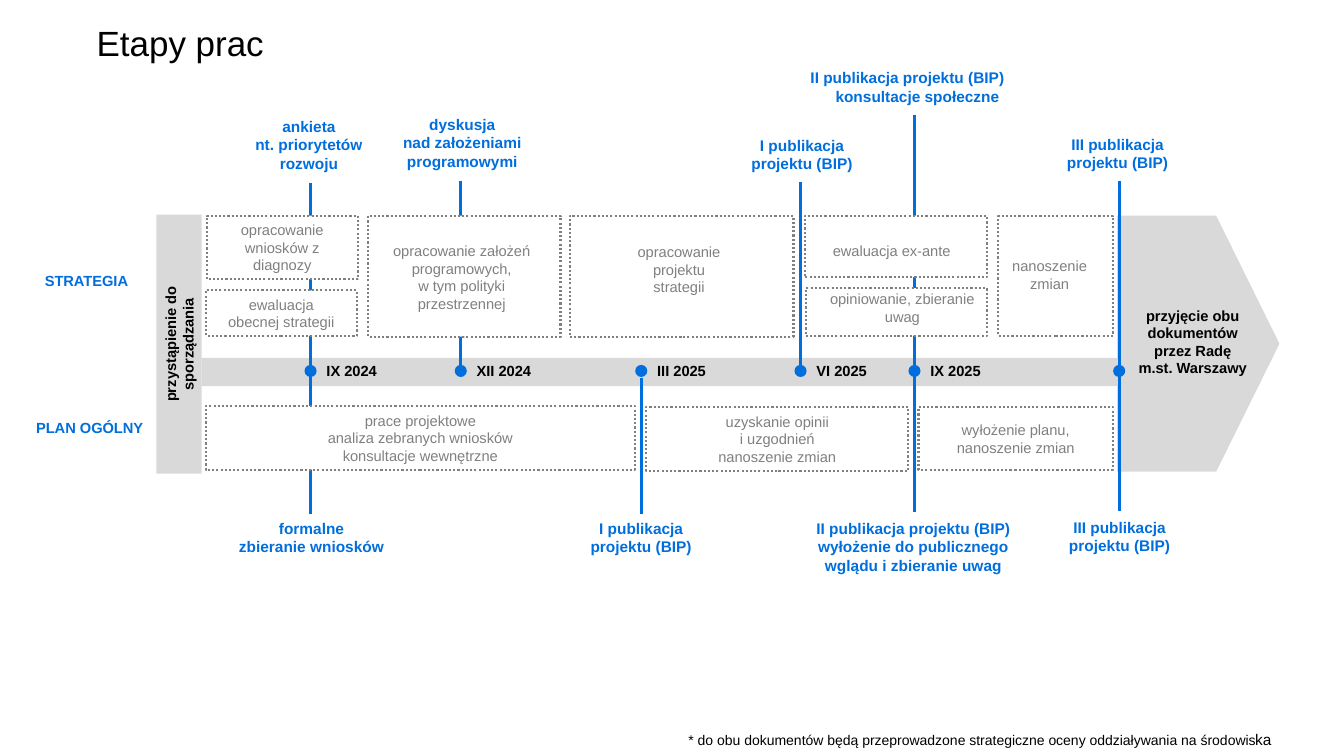
"""Build the "Etapy prac" slide: a timeline of two planning documents."""
from lxml.etree import SubElement
from pptx import Presentation
from pptx.dml.color import RGBColor
from pptx.enum.dml import MSO_LINE_DASH_STYLE as Dash
from pptx.enum.shapes import MSO_CONNECTOR as Connector, MSO_SHAPE as Shape
from pptx.enum.text import MSO_ANCHOR as Anchor, PP_ALIGN as Align
from pptx.oxml.ns import qn
from pptx.util import Pt

PX = 9144
FONT = "Arial"
BLUE = RGBColor(0x00, 0x6E, 0xDC)
GREY = RGBColor(0x80, 0x80, 0x80)
PALE = RGBColor(0xD9, 0xD9, 0xD9)
BLACK = RGBColor(0, 0, 0)
WHITE = RGBColor(255, 255, 255)

TITLE = "Etapy prac"
START = "przystąpienie do\nsporządzania"
FINISH = "przyjęcie obu\vdokumentów\vprzez Radę\vm.st. Warszawy"
FOOTNOTE = "* do obu dokumentów będą przeprowadzone strategiczne oceny oddziaływania na środowis"
FOOTNOTE_END = "ka"

TRACKS = [((7, 265, 130, 28), "STRATEGIA"), ((8, 411, 144, 28), "PLAN OGÓLNY")]

# fields: x, line top, line bottom, date
MILESTONES = [
    (308, 182, 510, "IX 2024"),
    (457, 180, 365, "XII 2024"),
    (636, 375, 510, "III 2025"),
    (794, 181, 369, "VI 2025"),
    (907, 114, 508, "IX 2025"),
    (1110, 180, 507, ""),
]

STAGES = [
    ((205, 214, 150, 63), "opracowanie\vwniosków z\vdiagnozy"),
    ((204, 288, 150, 45), "ewaluacja\nobecnej strategii"),
    ((365, 214, 191, 120), ""),
    ((565, 214, 222, 120), ""),
    ((798, 214, 181, 61), ""),
    ((799, 286, 180, 47), ""),
    ((990, 214, 114, 119), ""),
    ((204, 403, 426, 63),
     "prace projektowe\vanaliza zebranych wniosków\nkonsultacje wewnętrzne"),
    ((641, 404, 260, 63), "uzyskanie opinii\vi uzgodnień\vnanoszenie zmian"),
    ((911, 404, 193, 62), "wyłożenie planu,\nnanoszenie zmian"),
]

STAGE_LABELS = [
    ((371, 235, 174, 81),
     "opracowanie założeń\nprogramowych,\vw tym polityki\nprzestrzennej"),
    ((565, 236, 217, 74), "opracowanie\nprojektu\nstrategii"),
    ((816, 235, 137, 28), "ewaluacja ex-ante"),
    ((811, 283, 168, 46), "opiniowanie, zbieranie\vuwag"),
    ((990, 250, 102, 54), "nanoszenie\nzmian"),
]

CONSULTATION = ((794, 63, 232, 47), "II publikacja projektu (BIP)\nkonsultacje społeczne")
EVENTS = [
    ((198, 111, 217, 66), "ankieta\nnt. priorytetów\nrozwoju"),
    ((344, 109, 229, 66), "dyskusja\nnad założeniami\vprogramowymi"),
    ((726, 130, 139, 47), "I publikacja\nprojektu (BIP)"),
    ((1041, 129, 135, 47), "III publikacja\nprojektu (BIP)"),
    ((208, 510, 202, 47), "formalne\nzbieranie wniosków"),
    ((568, 510, 136, 47), "I publikacja\nprojektu (BIP)"),
    ((769, 510, 274, 66),
     "II publikacja projektu (BIP)\vwyłożenie do publicznego\vwglądu i zbieranie uwag"),
    ((1043, 509, 135, 47), "III publikacja\nprojektu (BIP)"),
]

AXIS_Y, DOT, DATE_GAP = 368, 12, 6


def scaled(box):
    return [value * PX for value in box]


def write(frame, text, size, color, bold=False, align=Align.CENTER, anchor=Anchor.TOP,
          spacing=None):
    frame.word_wrap = True
    frame.vertical_anchor = anchor
    frame.text = text
    for paragraph in frame.paragraphs:
        paragraph.alignment = align
        paragraph.line_spacing = spacing
        font = paragraph.font
        font.name, font.size, font.bold = FONT, Pt(size), bold
        font.color.rgb = color


def add_label(slide, box, text, size, color, **style):
    frame = slide.shapes.add_textbox(*scaled(box)).text_frame
    write(frame, text, size, color, **style)
    return frame


def add_block(slide, kind, box, fill):
    shape = slide.shapes.add_shape(kind, *scaled(box))
    shape.shadow.inherit = False
    shape.fill.solid()
    shape.fill.fore_color.rgb = fill
    shape.line.fill.background()
    return shape


def add_stage(slide, box, text):
    shape = add_block(slide, Shape.RECTANGLE, box, WHITE)
    shape.line.color.rgb = GREY
    shape.line.width = Pt(1.5)
    shape.line.dash_style = Dash.ROUND_DOT
    if text:
        write(shape.text_frame, text, 10.5, GREY, anchor=Anchor.MIDDLE)


def add_milestone(slide, x, top, bottom, date):
    line = slide.shapes.add_connector(Connector.STRAIGHT, *scaled((x, top, x, bottom)))
    line.line.color.rgb = BLUE
    line.line.width = Pt(2)
    SubElement(line.element.spPr, qn("a:effectLst"))
    add_block(slide, Shape.OVAL, (x - DOT // 2, AXIS_Y - DOT // 2, DOT, DOT), BLUE)
    if date:
        add_label(slide, (x + DATE_GAP, AXIS_Y - 14, 90, 28), date, 10.5, BLACK,
                  bold=True, align=Align.LEFT)


def add_frame(slide):
    add_block(slide, Shape.RECTANGLE, (200, 355, 908, 28), PALE)
    arrow = add_block(slide, Shape.PENTAGON, (1108, 214, 161, 254), PALE)
    arrow.adjustments[0] = 0.39
    start = add_block(slide, Shape.RECTANGLE, (155, 213, 45, 257), PALE)
    write(start.text_frame, START, 10.5, BLACK, bold=True, anchor=Anchor.MIDDLE)
    start.element.find(".//" + qn("a:bodyPr")).set("vert", "vert270")


def main():
    presentation = Presentation()
    presentation.slide_width, presentation.slide_height = scaled((1333, 750))
    slide = presentation.slides.add_slide(presentation.slide_layouts[6])
    add_label(slide, (86, 11, 370, 67), TITLE, 25, BLACK, align=Align.LEFT,
              anchor=Anchor.MIDDLE, spacing=0.9)
    add_frame(slide)
    for milestone in MILESTONES:
        add_milestone(slide, *milestone)
    for box, text in STAGES:
        add_stage(slide, box, text)
    for box, text in STAGE_LABELS:
        add_label(slide, box, text, 10.5, GREY)
    for box, text in EVENTS:
        add_label(slide, box, text, 11, BLUE, bold=True)
    consultation = add_label(slide, *CONSULTATION, 11, BLUE, bold=True)
    consultation.paragraphs[0].alignment = Align.LEFT
    for box, text in TRACKS:
        add_label(slide, box, text, 10.5, BLUE, bold=True, align=Align.RIGHT,
                  anchor=Anchor.MIDDLE, spacing=0.9)
    add_label(slide, (1113, 299, 140, 88), FINISH, 10.5, BLACK, bold=True)
    footnote = add_label(slide, (673, 720, 660, 30), FOOTNOTE, 10, BLACK,
                         align=Align.LEFT, anchor=Anchor.MIDDLE, spacing=0.9)
    ending = footnote.paragraphs[0].add_run()
    ending.text = FOOTNOTE_END
    ending.font.size = Pt(11)
    presentation.save("out.pptx")


if __name__ == "__main__":
    main()
